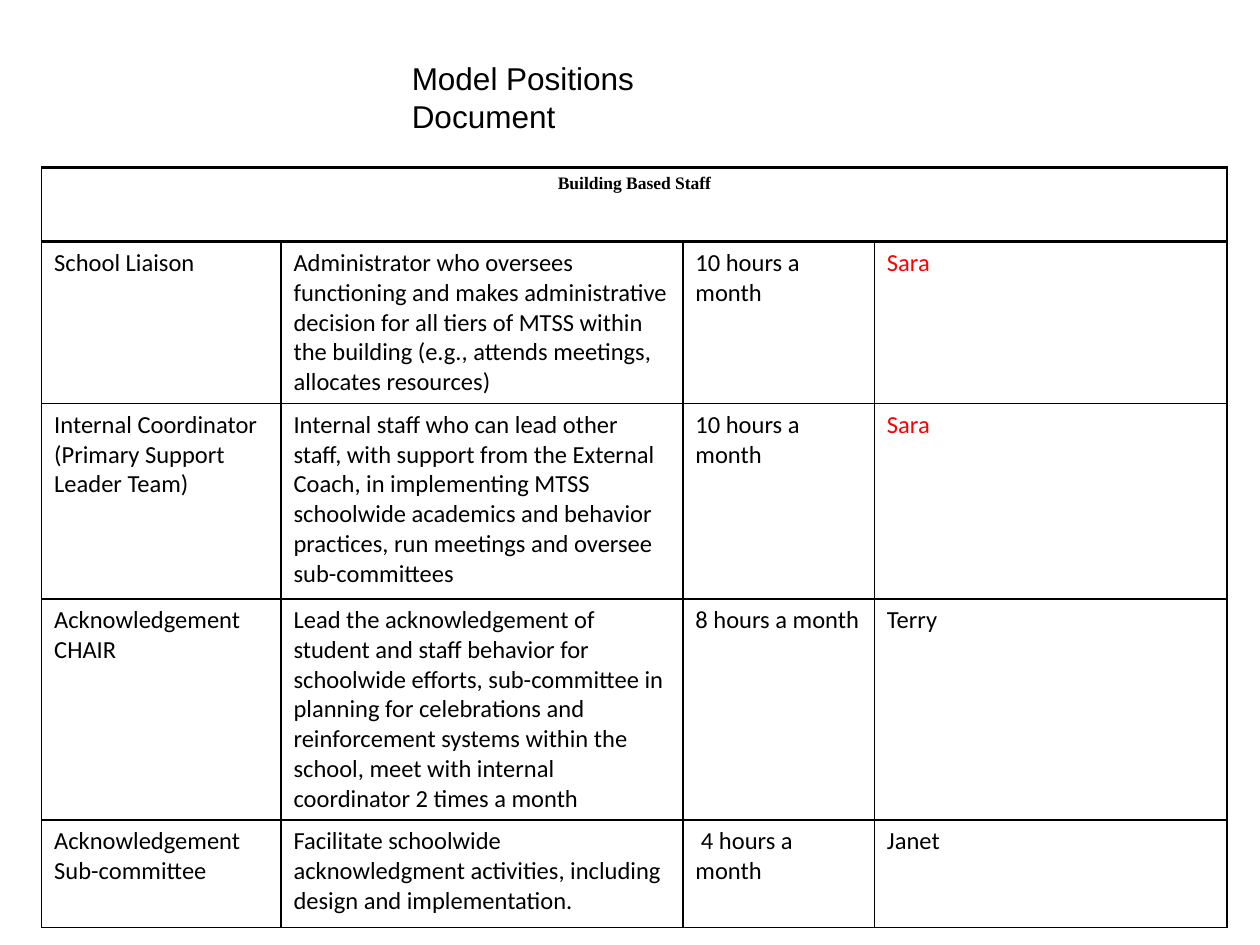
from dataclasses import dataclass

from lxml import etree
from pptx import Presentation
from pptx.dml.color import RGBColor
from pptx.enum.text import MSO_AUTO_SIZE, PP_ALIGN
from pptx.oxml.ns import qn
from pptx.util import Inches, Pt

CENTER = PP_ALIGN.CENTER
LEFT = PP_ALIGN.LEFT
FIT_SHAPE = MSO_AUTO_SIZE.SHAPE_TO_FIT_TEXT


@dataclass(frozen=True)
class Theme:
    black: RGBColor = RGBColor(0, 0, 0)
    red: RGBColor = RGBColor(255, 0, 0)
    title: tuple = ("Arial", Pt(18))
    heading: tuple = ("Times New Roman", Pt(10))
    body: tuple = ("Calibri", Pt(14))
    thin: int = Pt(1)
    thick: int = Pt(2)


THEME = Theme()


def write(text_frame, text, style, color=THEME.black, align=LEFT, bold=False):
    text_frame.text = text
    paragraph = text_frame.paragraphs[0]
    paragraph.alignment = align
    font = paragraph.runs[0].font
    font.name, font.size = style
    font.bold = bold
    font.color.rgb = color


def set_borders(cell, top, bottom):
    """Draw black borders, thin at the sides and as given above and below."""
    properties = cell._tc.get_or_add_tcPr()
    widths = {"lnL": THEME.thin, "lnR": THEME.thin, "lnT": top, "lnB": bottom}
    for position, (side, width) in enumerate(widths.items()):
        line = etree.Element(qn(f"a:{side}"), w=str(int(width)))
        fill = etree.SubElement(line, qn("a:solidFill"))
        etree.SubElement(fill, qn("a:srgbClr"), val=str(THEME.black))
        properties.insert(position, line)


presentation = Presentation()
presentation.slide_width = Inches(10)
presentation.slide_height = Inches(7.5)
slide = presentation.slides.add_slide(presentation.slide_layouts[6])

positions = [
    ("School Liaison",
     "Administrator who oversees functioning and makes administrative decision "
     "for all tiers of MTSS within the building (e.g., attends meetings, "
     "allocates resources)",
     "10 hours a month", "Sara"),
    ("Internal Coordinator (Primary Support Leader Team)",
     "Internal staff who can lead other staff, with support from the External "
     "Coach, in implementing MTSS schoolwide academics and behavior practices, "
     "run meetings and oversee sub-committees",
     "10 hours a month", "Sara"),
    ("Acknowledgement CHAIR",
     "Lead the acknowledgement of student and staff behavior for schoolwide "
     "efforts, sub-committee in planning for celebrations and reinforcement "
     "systems within the school, meet with internal coordinator 2 times a month",
     "8 hours a month", "Terry"),
    ("Acknowledgement Sub-committee",
     "Facilitate schoolwide acknowledgment activities, including design and "
     "implementation.",
     " 4 hours a month", "Janet"),
]
column_widths = [1.9, 3.19, 1.52, 2.8]
row_heights = [0.59, 1.27, 1.55, 1.51, 0.85]

# Staff table
table = slide.shapes.add_table(
    len(row_heights), len(column_widths), Inches(0.33), Inches(1.33),
    Inches(sum(column_widths)), Inches(sum(row_heights))).table
table.first_row = False
table.horz_banding = False
for column, width in zip(table.columns, column_widths):
    column.width = Inches(width)
for row, height in zip(table.rows, row_heights):
    row.height = Inches(height)

for row_index, row in enumerate(table.rows):
    top = THEME.thick if row_index <= 1 else THEME.thin
    bottom = THEME.thick if row_index == 0 else THEME.thin
    for cell in row.cells:
        cell.fill.background()
        set_borders(cell, top, bottom)

heading = table.cell(0, 0)
heading.merge(table.cell(0, len(column_widths) - 1))
write(heading.text_frame, "Building Based Staff", THEME.heading, align=CENTER, bold=True)

for row_index, position in enumerate(positions, start=1):
    for column_index, text in enumerate(position):
        color = THEME.red if text == "Sara" else THEME.black
        write(table.cell(row_index, column_index).text_frame, text, THEME.body, color)

# Title
title = slide.shapes.add_textbox(Inches(3.17), Inches(0.42), Inches(3.17), Inches(0.4))
title.text_frame.word_wrap = False
title.text_frame.auto_size = FIT_SHAPE
write(title.text_frame, "Model Positions Document", THEME.title)

presentation.save("out.pptx")
